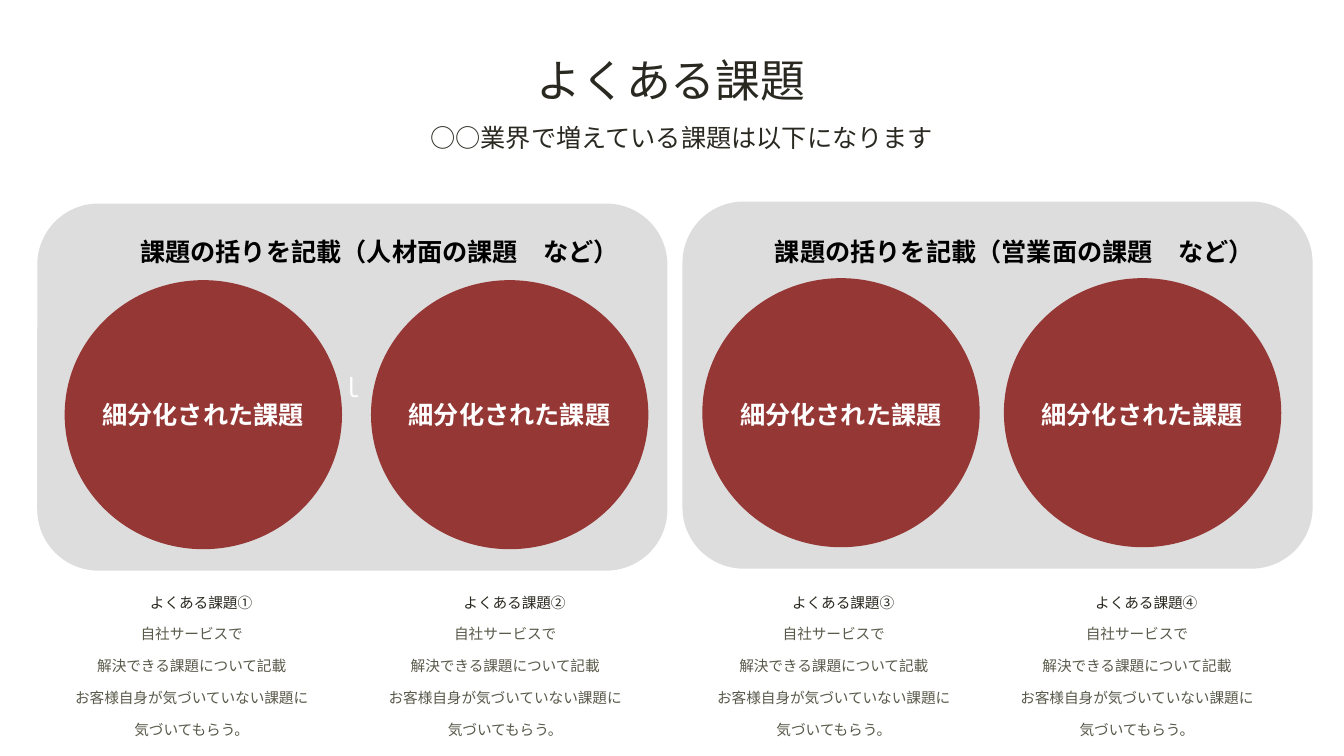
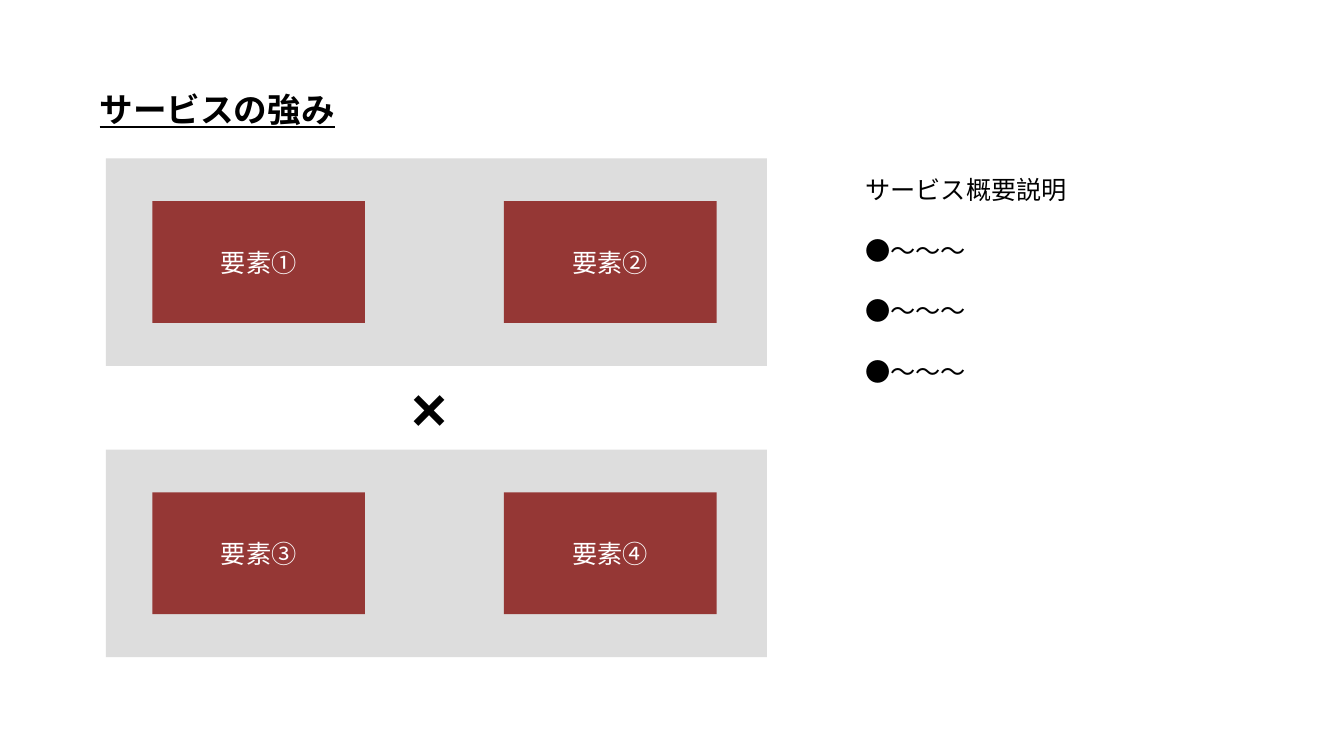
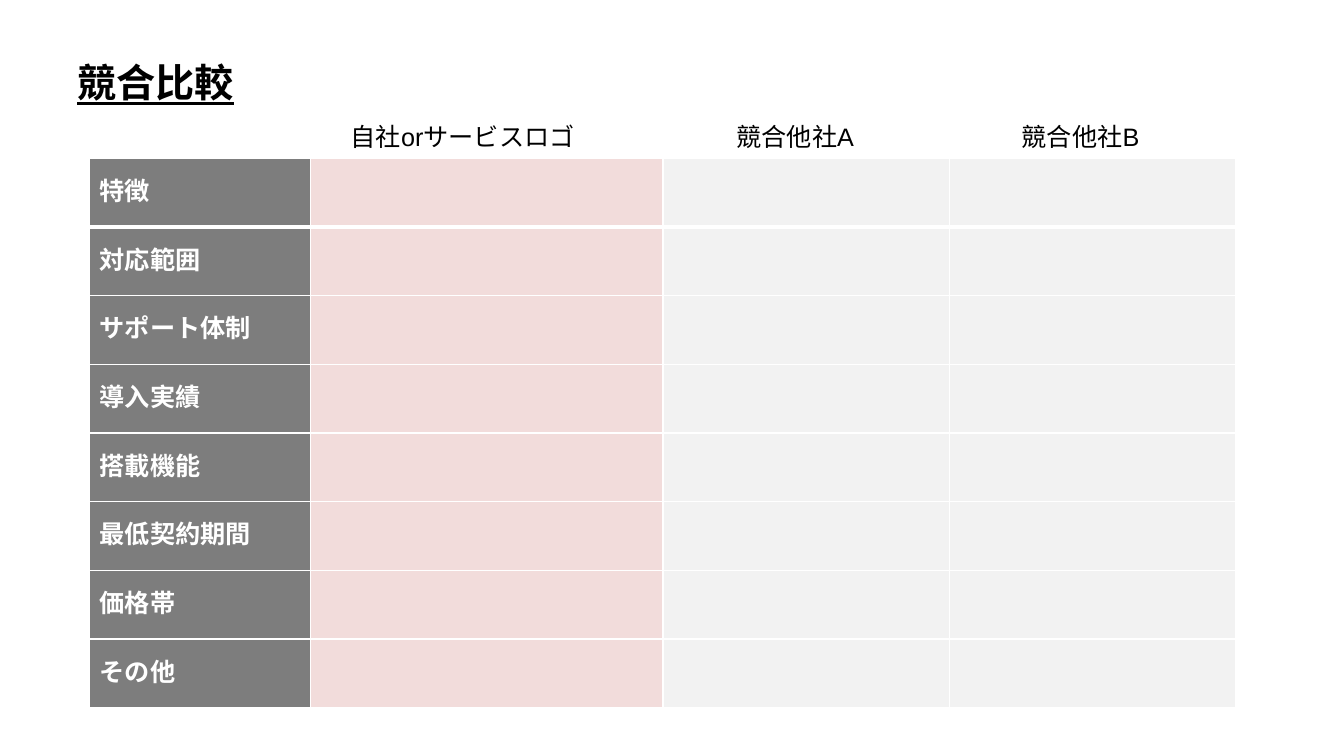
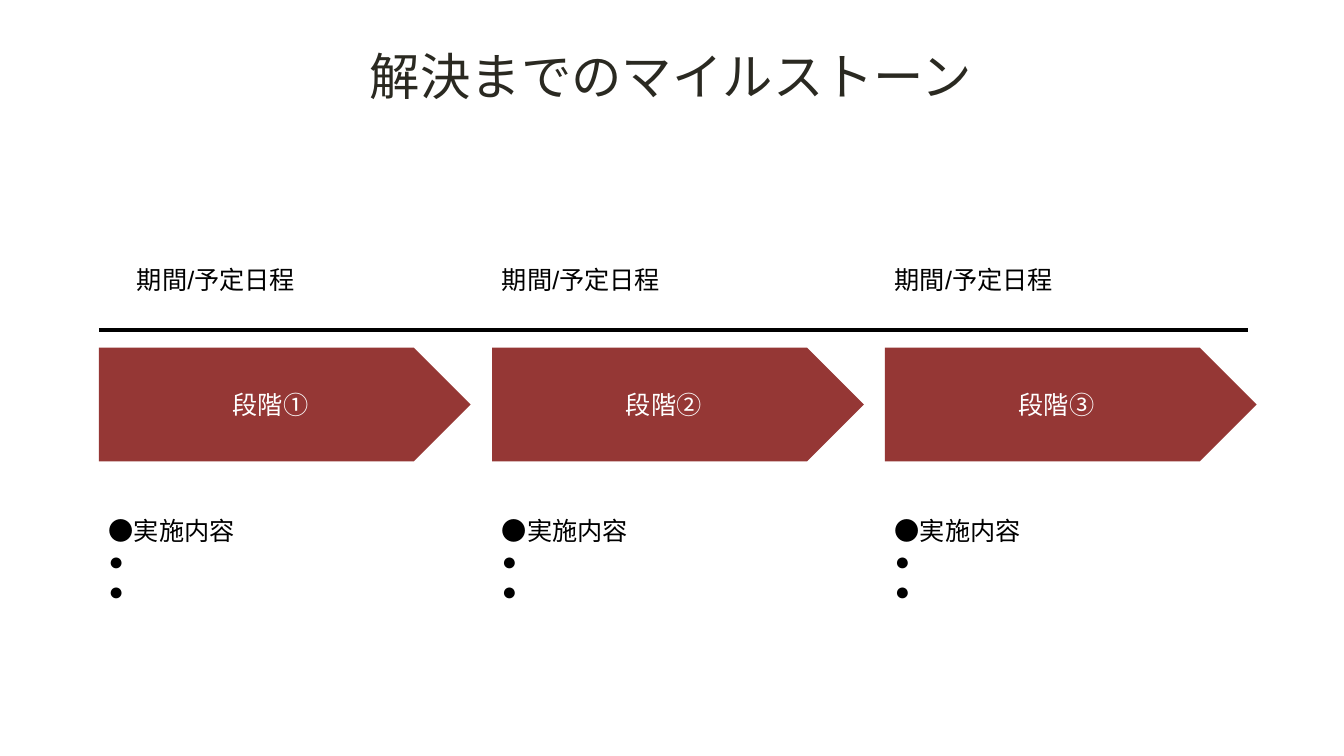
"""Build a four-slide sales deck: issues, strengths, comparison and milestones."""
from dataclasses import dataclass, replace

from lxml import etree
from pptx import Presentation
from pptx.dml.color import RGBColor
from pptx.enum.shapes import MSO_CONNECTOR, MSO_SHAPE
from pptx.enum.text import MSO_ANCHOR, MSO_AUTO_SIZE, PP_ALIGN
from pptx.oxml.ns import qn
from pptx.util import Cm, Pt

RECT = MSO_SHAPE.RECTANGLE
ROUNDED = MSO_SHAPE.ROUNDED_RECTANGLE
CIRCLE = MSO_SHAPE.FLOWCHART_CONNECTOR
ARROW = MSO_SHAPE.PENTAGON
STRAIGHT = MSO_CONNECTOR.STRAIGHT
LEFT, CENTER = PP_ALIGN.LEFT, PP_ALIGN.CENTER
TOP, MIDDLE = MSO_ANCHOR.TOP, MSO_ANCHOR.MIDDLE
FIT, FIXED = MSO_AUTO_SIZE.SHAPE_TO_FIT_TEXT, MSO_AUTO_SIZE.NONE

BLACK, WHITE, INK, OLIVE = "000000", "FFFFFF", "2A2921", "5A5A4C"
RED, PANEL = "953735", "DDDDDD"
HEAD_GRAY, PINK, PALE = "7D7D7D", "F2DCDB", "F2F2F2"
LATIN, GOTHIC = "Arial", "Noto Sans CJK JP"


@dataclass(frozen=True)
class Box:
    """Position and size in centimetres."""
    x: float
    y: float
    w: float
    h: float

    def lengths(self) -> tuple:
        """Return the four lengths for python-pptx."""
        return Cm(self.x), Cm(self.y), Cm(self.w), Cm(self.h)


@dataclass(frozen=True)
class Style:
    """Look of a text; spacings are in points."""
    size: float = 18
    color: str = BLACK
    font: str = LATIN
    bold: bool = False
    underline: bool = False
    align: PP_ALIGN = LEFT
    leading: float = 0
    after: float = 0


@dataclass(frozen=True)
class Issue:
    """One issue: its number, circle position and caption position."""
    number: str
    circle_x: float
    caption_x: float


@dataclass(frozen=True)
class IssueGroup:
    """A panel that holds a pair of issues."""
    heading: str
    x: float
    y: float
    heading_x: float
    issues: tuple[Issue, ...]


@dataclass(frozen=True)
class Stage:
    """One step of the milestone chart."""
    number: str
    x: float
    period_x: float


BODY = Style()
ON_RED = Style(color=WHITE, align=CENTER)
TITLE = Style(32, INK, GOTHIC, align=CENTER, leading=40.6, after=6)
SUBTITLE = replace(TITLE, size=18, leading=22.7)
HEADING = Style(24, font=GOTHIC, bold=True, underline=True)
GROUP_HEADING = Style(font=GOTHIC, bold=True)
CIRCLE_LABEL = replace(GROUP_HEADING, color=WHITE)
CAPTION = Style(10.5, INK, GOTHIC, align=CENTER, leading=18, after=6)
DETAIL = replace(CAPTION, color=OLIVE, leading=16.8)

TITLE_BOX = Box(0.25, 1.24, 33.32, 0.86)
ISSUE_GROUPS = (
    IssueGroup("課題の括りを記載（人材面の課題　など）", 0.94, 5.13, 3.28,
               (Issue("①", 1.63, 0.46), Issue("②", 9.35, 8.36))),
    IssueGroup("課題の括りを記載（営業面の課題　など）", 17.2, 5.08, 19.28,
               (Issue("③", 17.7, 16.64), Issue("④", 25.3, 24.28))),
)
ISSUE_DETAIL = ("自社サービスで", "解決できる課題について記載",
                "お客様自身が気づいていない課題に", "気づいてもらう。")
ELEMENT_ROWS = ((3.99, "①②"), (11.33, "③④"))
COMPARED = ("特徴", "対応範囲", "サポート体制", "導入実績",
            "搭載機能", "最低契約期間", "価格帯", "その他")
COMPANIES = (("自社orサービスロゴ", 8.59), ("競合他社A", 18.31), ("競合他社B", 25.5))
COLUMNS = ((5.56, HEAD_GRAY), (8.89, PINK), (7.21, PALE), (7.21, PALE))
STAGES = (Stage("①", 2.49, 3.2), Stage("②", 12.4, 12.4), Stage("③", 22.3, 22.3))


def rgb(color: str) -> RGBColor:
    """Turn a hex string into a colour."""
    return RGBColor.from_string(color)


def write(tf, lines: tuple[str, ...], style: Style) -> None:
    """Fill a text frame with one paragraph a line."""
    tf.text = "\n".join(lines)
    for p in tf.paragraphs:
        p.alignment = style.align
        p.line_spacing = Pt(style.leading or style.size * 1.2)
        p.space_after = Pt(style.after)
        for r in p.runs:
            r.font.size = Pt(style.size)
            r.font.bold = style.bold
            r.font.underline = style.underline
            r.font.color.rgb = rgb(style.color)
            r.font.name = style.font
            etree.SubElement(r.font._element, qn("a:ea"), typeface=GOTHIC)


def add_text(s, box: Box, lines: tuple[str, ...], style: Style, inset: bool = True) -> None:
    """Add a wrapped text box, with or without inner margins."""
    tf = s.shapes.add_textbox(*box.lengths()).text_frame
    tf.word_wrap = True
    tf.vertical_anchor = TOP
    tf.auto_size = FIT if inset else FIXED
    if not inset:
        tf.margin_left = tf.margin_right = tf.margin_top = tf.margin_bottom = 0
    write(tf, lines, style)


def add_block(s, kind: MSO_SHAPE, box: Box, fill: str, label: str = "",
              style: Style = ON_RED) -> None:
    """Add a flat shape with an optional centred label."""
    sp = s.shapes.add_shape(kind, *box.lengths())
    sp.shadow.inherit = False
    sp.fill.solid()
    sp.fill.fore_color.rgb = rgb(fill)
    sp.line.fill.background()
    if label:
        sp.text_frame.vertical_anchor = MIDDLE
        write(sp.text_frame, (label,), style)


def add_rule(s, x1: float, x2: float, y: float) -> None:
    """Add a thick horizontal black line."""
    line = s.shapes.add_connector(STRAIGHT, Cm(x1), Cm(y), Cm(x2), Cm(y))
    line.line.color.rgb = rgb(BLACK)
    line.line.width = Pt(3)
    etree.SubElement(line._element.spPr, qn("a:effectLst"))


def paint_cell(cell, fill: str, top: float, bottom: float) -> None:
    """Give a cell white borders and a fill."""
    tc_pr = cell._tc.get_or_add_tcPr()
    for side, width in (("L", 1), ("R", 1), ("T", top), ("B", bottom)):
        ln = etree.SubElement(tc_pr, qn(f"a:ln{side}"), w=str(Pt(width)))
        solid = etree.SubElement(ln, qn("a:solidFill"))
        etree.SubElement(solid, qn("a:srgbClr"), val=WHITE)
    cell.fill.solid()
    cell.fill.fore_color.rgb = rgb(fill)
    cell.vertical_anchor = MIDDLE


def build_issues(s) -> None:
    """Draw the common issues in two panels."""
    add_text(s, TITLE_BOX, ("よくある課題",), TITLE, inset=False)
    add_text(s, Box(10.41, 3.05, 13.54, 0.53),
             ("○○業界で増えている課題は以下になります",), SUBTITLE, inset=False)
    for group, mark in zip(ISSUE_GROUPS, ("ｌ", "")):
        add_block(s, ROUNDED, Box(group.x, group.y, 15.88, 9.25), PANEL, mark)
        add_text(s, Box(group.heading_x, 5.82, 13.67, 1.02), (group.heading,), GROUP_HEADING)
        for issue in group.issues:
            add_block(s, CIRCLE, Box(issue.circle_x, group.y + 1.93, 6.99, 6.78), RED)
            add_text(s, Box(issue.circle_x + 0.7, 9.93, 6.78, 1.02),
                     ("細分化された課題",), CIRCLE_LABEL)
            add_text(s, Box(issue.caption_x, 14.78, 9.22, 0.64),
                     (f"よくある課題{issue.number}",), CAPTION, inset=False)
            add_text(s, Box(issue.caption_x + 0.55, 15.6, 7.65, 2.97),
                     ISSUE_DETAIL, DETAIL, inset=False)


def build_strengths(s) -> None:
    """Draw the service strengths as two rows of elements."""
    add_text(s, Box(2.26, 2.11, 11.2, 1.27), ("サービスの強み",), HEADING)
    for y, numbers in ELEMENT_ROWS:
        add_block(s, RECT, Box(2.67, y, 16.66, 5.23), PANEL)
        for i, number in enumerate(numbers):
            add_block(s, RECT, Box(3.84 + i * 8.86, y + 1.08, 5.36, 3.07), RED, f"要素{number}")
    add_text(s, Box(10.11, 9.19, 2.01, 2.13), ("×",), Style(44, bold=True))
    add_text(s, Box(21.56, 4.27, 10.67, 11.79),
             ("サービス概要説明",) + ("●～～～",) * 3, replace(BODY, after=21.6))


def build_comparison(s) -> None:
    """Draw the comparison table with its column heads."""
    add_text(s, Box(1.7, 1.35, 7.92, 1.45), ("競合比較",), replace(HEADING, size=28))
    for name, x in COMPANIES:
        add_text(s, Box(x, 2.92, 6.58, 1.02), (name,), BODY)
    box = Box(2.26, 3.99, sum(w for w, _ in COLUMNS), 1.73 * len(COMPARED))
    table = s.shapes.add_table(len(COMPARED), len(COLUMNS), *box.lengths()).table
    table.first_row = table.horz_banding = False
    for column, (width, _) in zip(table.columns, COLUMNS):
        column.width = Cm(width)
    for i, topic in enumerate(COMPARED):
        for j, (_, fill) in enumerate(COLUMNS):
            paint_cell(table.cell(i, j), fill, 3 if i == 1 else 1, 3 if i == 0 else 1)
        write(table.cell(i, 0).text_frame, (topic,), Style(color=WHITE, bold=True))


def build_milestones(s) -> None:
    """Draw the stages on the way to the solution."""
    add_text(s, TITLE_BOX, ("解決までのマイルストーン",), replace(TITLE, size=36), inset=False)
    add_rule(s, 2.49, 31.45, 8.31)
    for stage in STAGES:
        add_text(s, Box(stage.period_x, 6.53, 6.76, 1.02), ("期間/予定日程",), BODY)
        add_block(s, ARROW, Box(stage.x, 8.76, 9.37, 2.87), RED, f"段階{stage.number}",
                  replace(ON_RED, font=GOTHIC))
        add_text(s, Box(stage.x, 12.85, 8.69, 2.57), ("●実施内容", "●", "●"), BODY)


def main() -> None:
    """Build and save the deck."""
    prs = Presentation()
    prs.slide_width, prs.slide_height = Cm(33.87), Cm(19.05)
    for build in (build_issues, build_strengths, build_comparison, build_milestones):
        build(prs.slides.add_slide(prs.slide_layouts[6]))
    prs.save("out.pptx")


if __name__ == "__main__":
    main()
